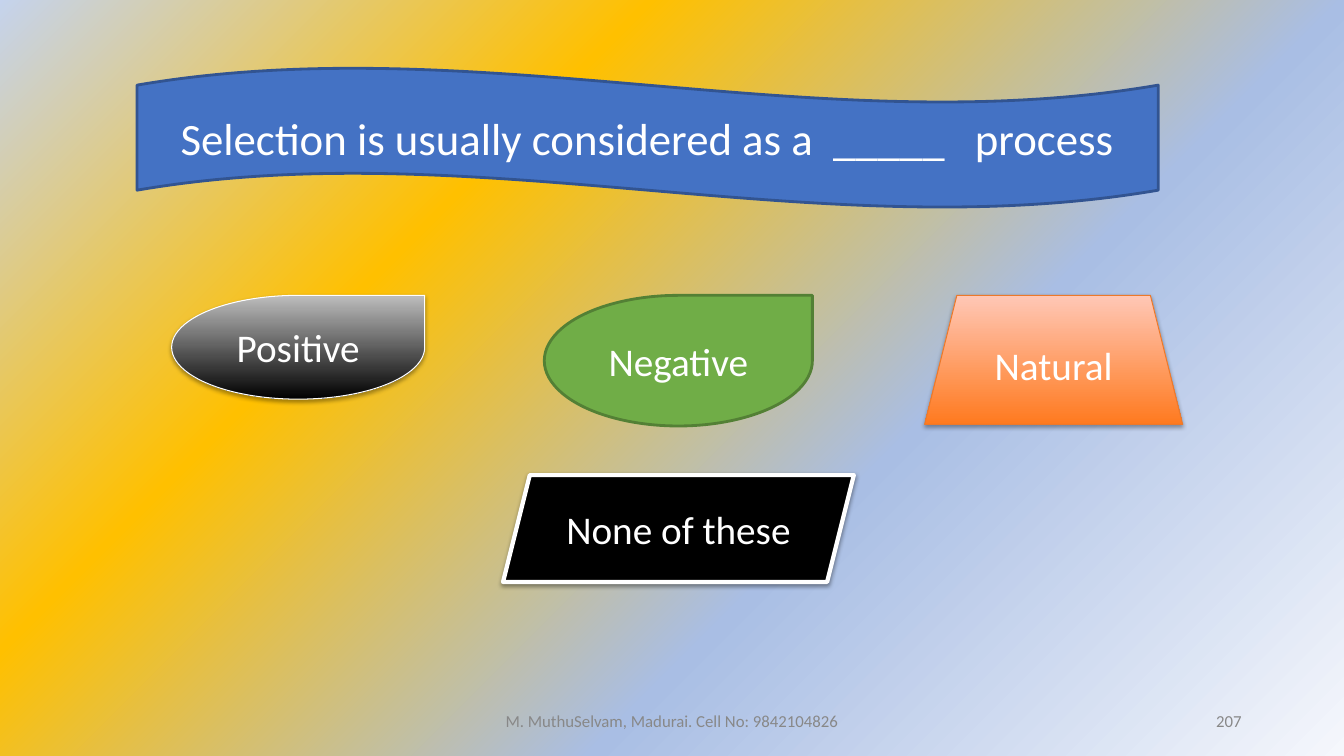
"""Build a quiz slide with a question banner and four answer shapes."""
from dataclasses import dataclass
from typing import Optional

from lxml.etree import SubElement
from pptx import Presentation
from pptx.dml.color import RGBColor
from pptx.dml.fill import FillFormat
from pptx.enum.shapes import MSO_SHAPE
from pptx.enum.text import MSO_ANCHOR, PP_ALIGN
from pptx.oxml.ns import qn
from pptx.oxml.xmlchemy import BaseOxmlElement
from pptx.shapes.autoshape import Shape
from pptx.slide import Slide
from pptx.util import Emu, Inches, Pt

SLIDE_HEIGHT = Inches(7.5)
SLIDE_WIDTH = Emu(SLIDE_HEIGHT * 16 // 9)
Stops = tuple[tuple[int, str], ...]


@dataclass(frozen=True)
class Theme:
    """Colours, font and type sizes of the slide."""
    font: str = "Calibri"
    question_size: int = 32
    answer_size: int = 28
    footer_size: int = 12
    white: str = "FFFFFF"
    black: str = "000000"
    footer: str = "888888"
    blue: str = "4472C4"
    blue_edge: str = "325491"
    green: str = "70AD47"
    green_edge: str = "538035"
    orange_edge: str = "EC792B"
    grey_fade: Stops = ((0, "BDBDBD"), (100, "000000"))
    orange_fade: Stops = ((0, "FFC7B6"), (100, "FF7A1F"))
    backdrop: Stops = ((0, "C5D3ED"), (31, "FFC000"), (64, "A9BEE4"), (100, "F5F7FC"))


@dataclass(frozen=True)
class Area:
    """A rectangle in percent of the slide's width and height."""
    left: float
    top: float
    width: float
    height: float

    def lengths(self) -> tuple[Emu, Emu, Emu, Emu]:
        """Return left, top, width and height as lengths."""
        return (Emu(round(SLIDE_WIDTH * self.left / 100)), Emu(round(SLIDE_HEIGHT * self.top / 100)),
                Emu(round(SLIDE_WIDTH * self.width / 100)), Emu(round(SLIDE_HEIGHT * self.height / 100)))


@dataclass(frozen=True)
class Shadow:
    """A shadow falling straight down, in percent and points."""
    opacity: int
    blur: float
    distance: float


@dataclass(frozen=True)
class Panel:
    """A filled shape with centred text."""
    text: str
    outline: MSO_SHAPE
    area: Area
    fill: str | Stops
    edge: str
    edge_width: float
    size: int
    shadow: Optional[Shadow] = None


@dataclass(frozen=True)
class FooterText:
    """A small text at the foot of the slide."""
    text: str
    area: Area
    alignment: PP_ALIGN


THEME = Theme()
ANSWER_TOP = 39.07
FOOTER_TOP, FOOTER_HEIGHT = 92.67, 5.33
SOFT_SHADOW = Shadow(35, 3.1, 1.8)
PANELS = (
    Panel("Selection is usually considered as a  _____   process", MSO_SHAPE.WAVE,
          Area(10.2, 8.95, 75.98, 18.53), THEME.blue, THEME.blue_edge, 2, THEME.question_size),
    Panel("Positive", MSO_SHAPE.TEAR, Area(12.77, ANSWER_TOP, 18.83, 13.73),
          THEME.grey_fade, THEME.white, 0.75, THEME.answer_size, SOFT_SHADOW),
    Panel("Natural", MSO_SHAPE.TRAPEZOID, Area(68.8, ANSWER_TOP, 19.2, 17.07),
          THEME.orange_fade, THEME.orange_edge, 0.75, THEME.answer_size, SOFT_SHADOW),
    Panel("None of these", MSO_SHAPE.PARALLELOGRAM, Area(37.43, 62.85, 26.1, 14.13),
          THEME.black, THEME.white, 3, THEME.answer_size, Shadow(38, 3.1, 1.6)),
    Panel("Negative", MSO_SHAPE.TEAR, Area(40.5, ANSWER_TOP, 19.95, 17.28),
          THEME.green, THEME.green_edge, 2, THEME.answer_size),
)
FOOTERS = (
    FooterText("M. MuthuSelvam, Madurai. Cell No: 9842104826",
               Area(33.13, FOOTER_TOP, 33.75, FOOTER_HEIGHT), PP_ALIGN.CENTER),
    FooterText("207", Area(70.63, FOOTER_TOP, 22.5, FOOTER_HEIGHT), PP_ALIGN.RIGHT),
)


def add_color(parent: BaseOxmlElement, color: str) -> BaseOxmlElement:
    """Append an RGB colour element."""
    return SubElement(parent, qn("a:srgbClr"), val=color)


def paint_gradient(fill: FillFormat, owner: BaseOxmlElement, stops: Stops, angle: int) -> None:
    """Fill with a linear gradient at a counter-clockwise angle."""
    fill.gradient()
    fill.gradient_angle = angle
    stop_list = next(owner.iter(qn("a:gsLst")))
    for stop in list(stop_list):
        stop_list.remove(stop)
    for position, color in stops:
        add_color(SubElement(stop_list, qn("a:gs"), pos=str(position * 1000)), color)


def cast_shadow(shape: Shape, shadow: Shadow) -> None:
    """Give the shape an outer shadow."""
    effects = shape.element.spPr.find(qn("a:effectLst"))
    outer = SubElement(effects, qn("a:outerShdw"), blurRad=str(Pt(shadow.blur)),
                       dist=str(Pt(shadow.distance)), dir="5400000", rotWithShape="0")
    SubElement(add_color(outer, THEME.black), qn("a:alpha"), val=str(shadow.opacity * 1000))


def write_text(shape: Shape, text: str, size: int, color: str, alignment: PP_ALIGN) -> None:
    """Set and format the text of a shape."""
    text_frame = shape.text_frame
    text_frame.text = text
    text_frame.word_wrap = True
    text_frame.vertical_anchor = MSO_ANCHOR.MIDDLE
    paragraph = text_frame.paragraphs[0]
    paragraph.alignment = alignment
    for run in paragraph.runs:
        run.font.name = THEME.font
        run.font.size = Pt(size)
        run.font.color.rgb = RGBColor.from_string(color)


def draw_panel(slide: Slide, panel: Panel) -> None:
    """Draw one filled shape."""
    shape = slide.shapes.add_shape(panel.outline, *panel.area.lengths())
    shape.shadow.inherit = False
    if isinstance(panel.fill, str):
        shape.fill.solid()
        shape.fill.fore_color.rgb = RGBColor.from_string(panel.fill)
    else:
        paint_gradient(shape.fill, shape.element, panel.fill, 270)
    shape.line.color.rgb = RGBColor.from_string(panel.edge)
    shape.line.width = Pt(panel.edge_width)
    if panel.shadow:
        cast_shadow(shape, panel.shadow)
    write_text(shape, panel.text, panel.size, THEME.white, PP_ALIGN.CENTER)


def draw_footer(slide: Slide, footer: FooterText) -> None:
    """Draw one footer text."""
    shape = slide.shapes.add_textbox(*footer.area.lengths())
    write_text(shape, footer.text, THEME.footer_size, THEME.footer, footer.alignment)


def main() -> None:
    """Build and save the presentation."""
    presentation = Presentation()
    presentation.slide_width = SLIDE_WIDTH
    presentation.slide_height = SLIDE_HEIGHT
    slide = presentation.slides.add_slide(presentation.slide_layouts[6])
    paint_gradient(slide.background.fill, slide.element, THEME.backdrop, 315)
    for panel in PANELS:
        draw_panel(slide, panel)
    for footer in FOOTERS:
        draw_footer(slide, footer)
    presentation.save("out.pptx")


if __name__ == "__main__":
    main()
